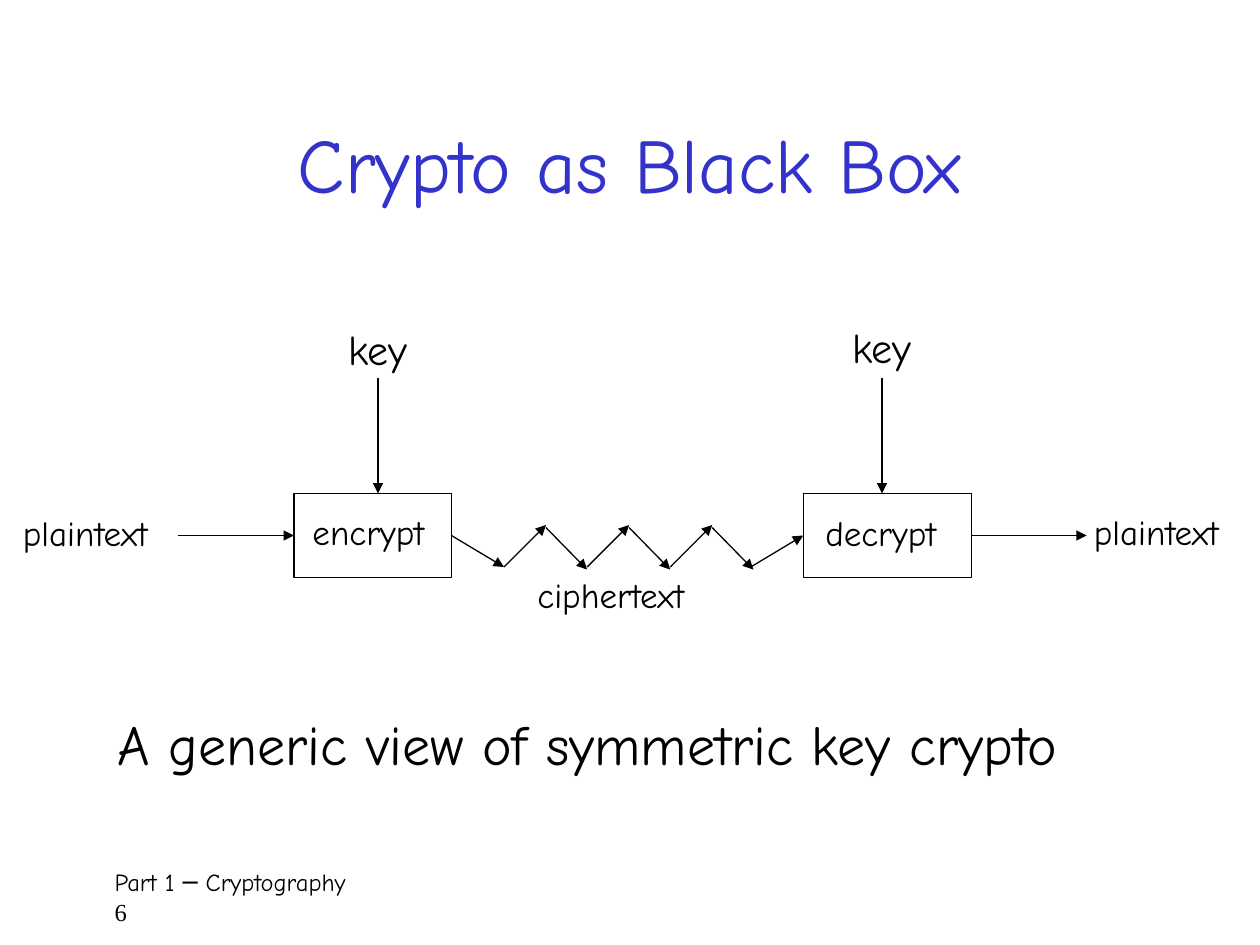
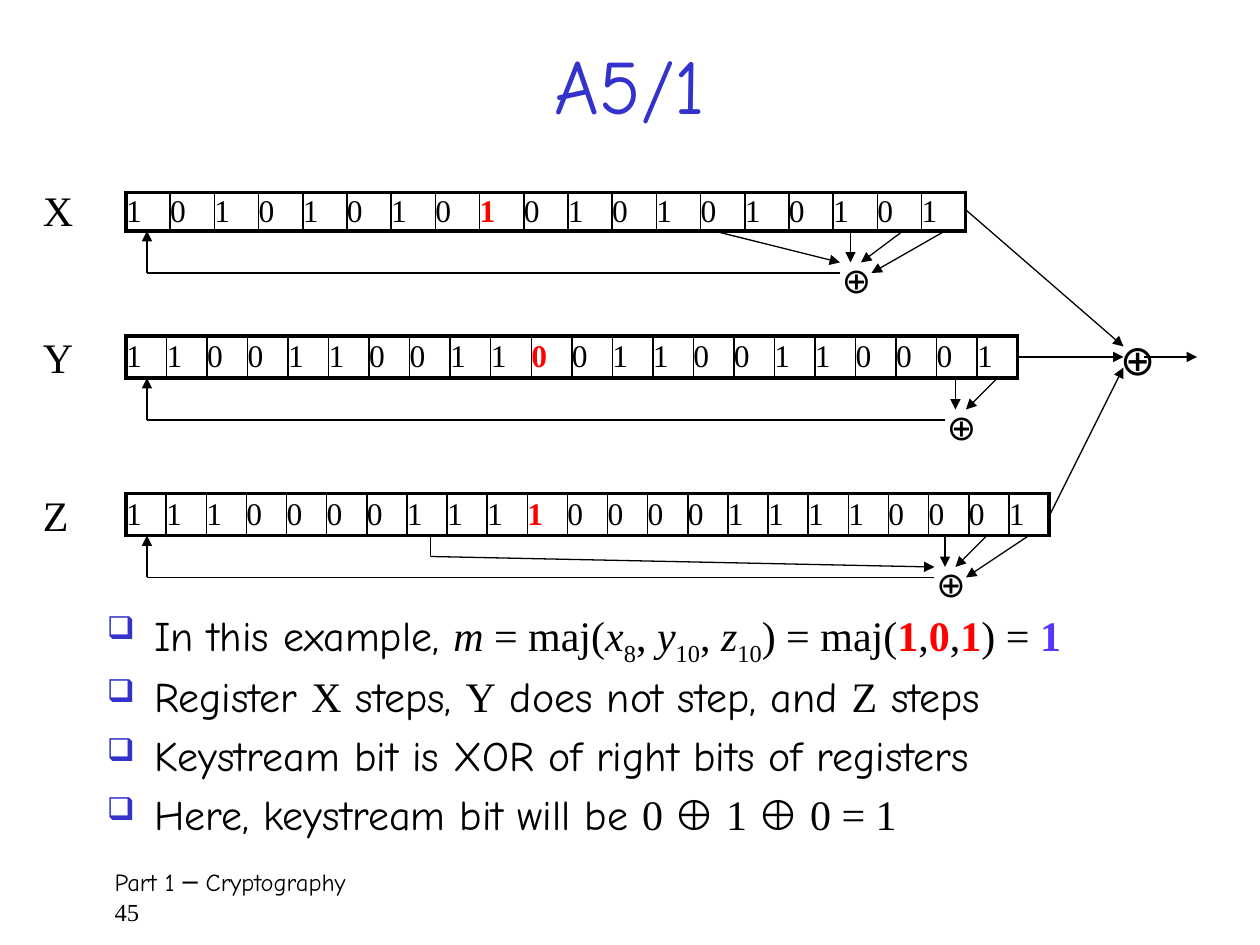
import lxml.etree
import pptx
import pptx.dml.color
import pptx.enum.shapes
import pptx.enum.text
import pptx.util
from pptx.oxml.ns import qn

Pt = pptx.util.Pt
HAND_FONT = "Comic Neue"
SERIF_FONT = "Times New Roman"
BLACK, BLUE, RED, VIOLET = "000000", "3333CC", "FF0000", "5437FF"
SERIF = {"font": SERIF_FONT}
ITALIC = {"font": SERIF_FONT, "italic": True}
SUBSCRIPT = {"font": SERIF_FONT, "baseline": -25}
MARKED = {"font": SERIF_FONT, "color": RED, "bold": True}
RESULT = {"font": SERIF_FONT, "color": VIOLET, "bold": True}


def to_color(value):
    """Turn a hex string into a colour."""
    return pptx.dml.color.RGBColor.from_string(value)


def add_text(paragraph, text, size=20, font=HAND_FONT, color=BLACK,
             bold=False, italic=False, baseline=0):
    """Add one formatted run to a paragraph."""
    run = paragraph.add_run()
    run.text = text
    run.font.size = Pt(size)
    run.font.name = font
    run.font.color.rgb = to_color(color)
    run.font.bold = bold
    run.font.italic = italic
    if baseline:
        run._r.get_or_add_rPr().set("baseline", str(baseline * 1000))


def add_xml(parent, tag, **attributes):
    """Append a drawing element to a parent element."""
    return lxml.etree.SubElement(parent, qn(f"a:{tag}"), attributes)


class Deck:
    """Hold the shared style and the current slide."""

    def __init__(self):
        """Start a presentation of 10 by 7.5 inches."""
        self.presentation = pptx.Presentation()
        self.presentation.slide_width = Pt(720)
        self.presentation.slide_height = Pt(540)
        self.slide = None

    def start_slide(self, title, number, top, height):
        """Add a slide with its title and footer."""
        layout = self.presentation.slide_layouts[6]
        self.slide = self.presentation.slides.add_slide(layout)
        footer = self.frame(54, 492, 618, 36)
        footer.margin_left = Pt(11.5)
        add_text(footer.paragraphs[0], "Part 1 ─ Cryptography", size=14)
        add_text(footer.add_paragraph(), str(number), size=14, font=SERIF_FONT)
        heading = self.frame(54, top, 612, height)
        heading.vertical_anchor = pptx.enum.text.MSO_ANCHOR.MIDDLE
        heading.paragraphs[0].alignment = pptx.enum.text.PP_ALIGN.CENTER
        add_text(heading.paragraphs[0], title, size=44, color=BLUE)

    def frame(self, left, top, width, height, wrap=True):
        """Add a text box and return its text frame."""
        shape = self.slide.shapes.add_textbox(Pt(left), Pt(top), Pt(width), Pt(height))
        shape.text_frame.word_wrap = wrap
        return shape.text_frame

    def label(self, text, left, top, width, height, wrap=True, **style):
        """Add a one-line label that fits its text."""
        frame = self.frame(left, top, width, height, wrap)
        frame.auto_size = pptx.enum.text.MSO_AUTO_SIZE.SHAPE_TO_FIT_TEXT
        add_text(frame.paragraphs[0], text, **style)

    def box(self, left, top, width, height):
        """Add an outlined rectangle."""
        shape = self.slide.shapes.add_shape(
            pptx.enum.shapes.MSO_SHAPE.RECTANGLE,
            Pt(left), Pt(top), Pt(width), Pt(height))
        shape.shadow.inherit = False
        shape.fill.background()
        shape.line.color.rgb = to_color(BLACK)
        shape.line.width = Pt(0.75)

    def line(self, start, end, arrow=True):
        """Draw a straight line, with an arrowhead unless told otherwise."""
        connector = self.slide.shapes.add_connector(
            pptx.enum.shapes.MSO_CONNECTOR.STRAIGHT, *map(Pt, start + end))
        connector.line.color.rgb = to_color(BLACK)
        connector.line.width = Pt(0.75)
        properties = connector._element.spPr
        if arrow:
            add_xml(properties.find(qn("a:ln")), "tailEnd", type="triangle")
        add_xml(properties, "effectLst")

    def bullets(self, items, left, top, width, height):
        """Add a bulleted list whose items are lists of text and format."""
        frame = self.frame(left, top, width, height)
        for index, item in enumerate(items):
            paragraph = frame.add_paragraph() if index else frame.paragraphs[0]
            paragraph.line_spacing = 0.8
            paragraph.space_before = Pt(4.8)
            paragraph.space_after = Pt(6)
            properties = paragraph._p.get_or_add_pPr()
            properties.set("marL", str(Pt(27)))
            properties.set("indent", str(-Pt(27)))
            add_xml(add_xml(properties, "buClr"), "srgbClr", val=BLUE)
            add_xml(properties, "buSzPct", val="75000")
            add_xml(properties, "buChar", char="❑")
            for text, style in item:
                add_text(paragraph, text, size=24, **style)

    def register(self, bits, marked, left, top, width, height):
        """Add a shift register as a one-row table."""
        count = len(bits)
        table = self.slide.shapes.add_table(
            1, count, Pt(left), Pt(top), Pt(width), Pt(height)).table
        table.first_row = table.horz_banding = False
        for index, bit in enumerate(bits):
            table.columns[index].width = Pt(width / count)
            cell = table.cell(0, index)
            cell.margin_left = cell.margin_right = 0
            cell.margin_top = cell.margin_bottom = 0
            cell.vertical_anchor = pptx.enum.text.MSO_ANCHOR.MIDDLE
            self.cell_borders(cell, index == 0, index == count - 1)
            cell.fill.background()
            style = MARKED if index == marked else SERIF
            add_text(cell.text_frame.paragraphs[0], bit, size=18, **style)

    def cell_borders(self, cell, first, last):
        """Give a cell thin inner and thick outer borders."""
        properties = cell._tc.get_or_add_tcPr()
        for side, thick in (("L", first), ("R", last), ("T", True), ("B", True)):
            border = add_xml(properties, f"ln{side}", w=str(Pt(2.25 if thick else 1)))
            add_xml(add_xml(border, "solidFill"), "srgbClr", val=BLACK)


def build_black_box(deck):
    """Draw the encryption and decryption flow."""
    deck.start_slide("Crypto as Black Box", 6, 48, 90)
    deck.box(168, 282, 90, 48)
    deck.box(459, 282, 96, 48)
    deck.label("plaintext", 6, 288.5, 102, 35)
    deck.label("plaintext", 618, 288, 102, 35)
    deck.label("ciphertext", 300, 324, 120, 35)
    deck.label("key", 192, 181.5, 65, 41, size=24)
    deck.label("key", 480, 180, 66, 41, size=24)
    deck.label("encrypt", 171.5, 288, 86, 35, wrap=False)
    deck.label("decrypt", 464.5, 288.5, 88, 35, wrap=False)
    deck.label("A generic view of symmetric key crypto", 60, 402, 615, 46,
               wrap=False, size=32)
    for left in (102, 555):
        deck.line((left, 306), (left + 66, 306))
    for center in (216, 504):
        deck.line((center, 216), (center, 282))
    deck.line((258, 306), (288, 324))
    for index in range(3):
        left = 288 + 47.5 * index
        deck.line((left, 324), (left + 24, 300))
        deck.line((left + 24, 301.5), (left + 47.5, 325.5))
    deck.line((429, 324), (459, 306))


def build_cipher(deck):
    """Draw the three registers and the worked example."""
    deck.start_slide("A5/1", 45, 24, 48)
    registers = [
        ("X", "1010101010101010101", 8, 132, 22, 480, 474, 198,
         [(486, 486, 18), (516, 492, 18), (540, 498, 24), (408, 480, 18)]),
        ("Y", "1100110011001100110001", 10, 216, 24, 510, 534, 204,
         [(546, 546, 18), (570, 552, 18)]),
        ("Z", "11100001111000011110001", 10, 306, 24, 528, 528, 210,
         [(540, 540, 18), (564, 546, 18), (588, 552, 24)]),
    ]
    left, feedback = 72, 84
    for name, bits, marked, bottom, height, width, gate, output, taps in registers:
        deck.label(name, 17.5, bottom - 30, 30, 36, wrap=False, size=24, **SERIF)
        deck.register(bits, marked, left, bottom - height, width, height)
        deck.label("⊕", gate, bottom + 12, 29.5, 31, wrap=False)
        for start, end, drop in taps:
            deck.line((start, bottom), (end, bottom + drop))
        deck.line((gate + 6, bottom + 24), (feedback, bottom + 24), arrow=False)
        deck.line((feedback, bottom + 24), (feedback, bottom))
        deck.line((left + width, bottom - 12), (642, output))
    deck.line((246, 306), (246, 318), arrow=False)
    deck.line((246, 318), (534, 324))
    deck.label("⊕", 633, 187, 33, 36, wrap=False, size=24)
    deck.line((654, 204), (684, 204))
    deck.bullets([
        [("In this example, ", {}), ("m", ITALIC), (" = maj(", SERIF),
         ("x", ITALIC), ("8", SUBSCRIPT), (", ", SERIF),
         ("y", ITALIC), ("10", SUBSCRIPT), (", ", SERIF),
         ("z", ITALIC), ("10", SUBSCRIPT), (") = maj(", SERIF),
         ("1", MARKED), (",", SERIF), ("0", MARKED), (",", SERIF),
         ("1", MARKED), (") = ", SERIF), ("1", RESULT)],
        [("Register ", {}), ("X", SERIF), (" steps, ", {}), ("Y", SERIF),
         (" does not step, and ", {}), ("Z", SERIF), (" steps", {})],
        [("Keystream bit is XOR of right bits of registers", {})],
        [("Here, keystream bit will be ", {}), ("0 ⊕ 1 ⊕ 0 = 1", SERIF)],
    ], 54, 348, 612, 138)


def main():
    """Build both slides and save them."""
    deck = Deck()
    build_black_box(deck)
    build_cipher(deck)
    deck.presentation.save("out.pptx")


if __name__ == "__main__":
    main()
